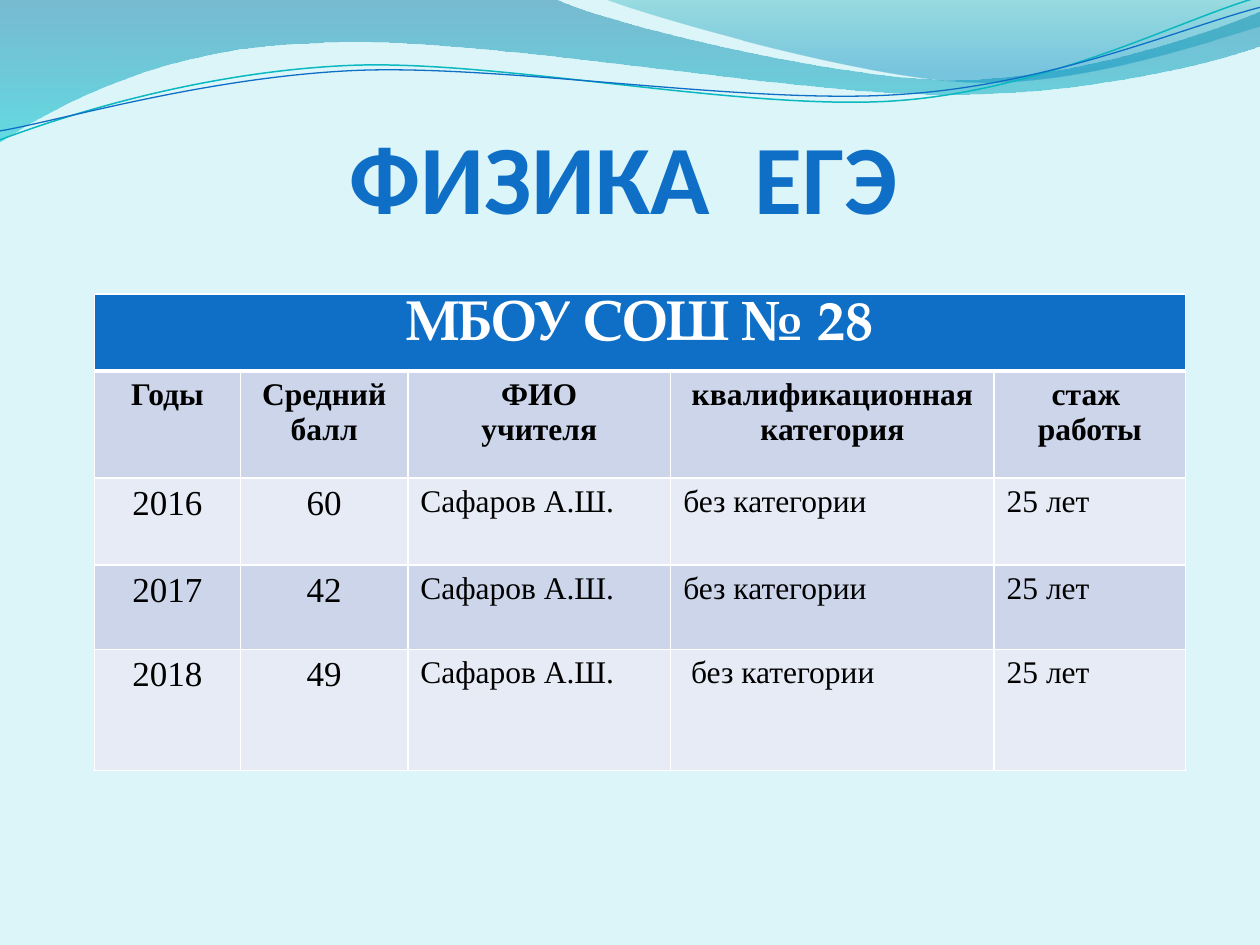
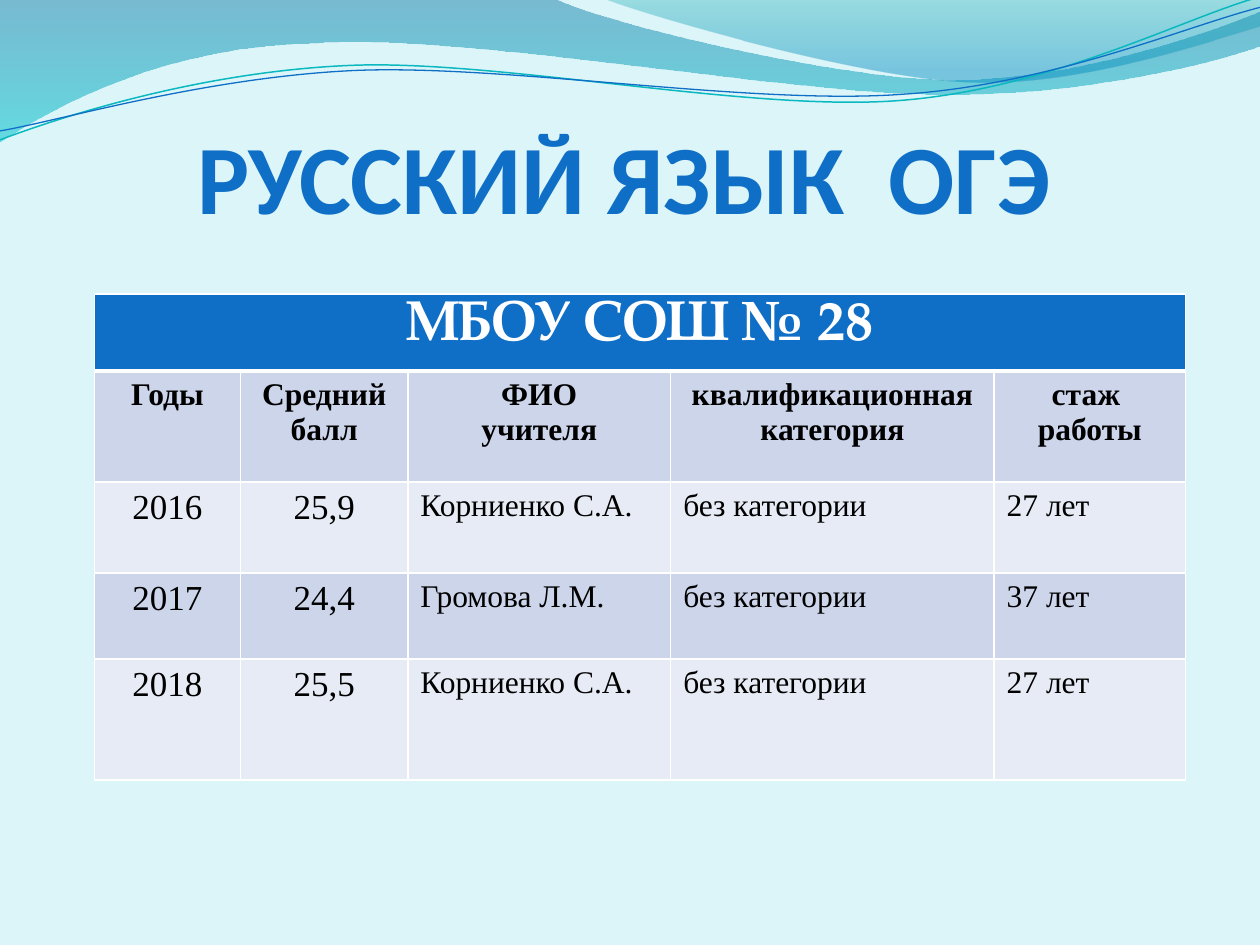
import pptx
import pptx.dml.color
import pptx.enum.text
import pptx.oxml
import pptx.oxml.ns
import pptx.util
from lxml import etree

Cm, Pt = pptx.util.Cm, pptx.util.Pt
ALIGN = pptx.enum.text.PP_ALIGN
qn = pptx.oxml.ns.qn

# Content
SCHOOL = "МБОУ СОШ № 28"
HEADINGS = ["Годы", "Средний балл", "ФИО\nучителя",
            "квалификационная категория", "стаж \nработы"]
EXAMS = [
    {"title": "ФИЗИКА  ЕГЭ",
     "row_heights": [1.55, 2.16, 1.75, 1.7, 2.44],
     "results": [
         ["2016", "60", "Сафаров А.Ш.", "без категории", "25 лет"],
         ["2017", "42", "Сафаров А.Ш.", "без категории", "25 лет"],
         ["2018", "49", "Сафаров А.Ш.", " без категории", "25 лет"]]},
    {"title": "РУССКИЙ ЯЗЫК  ОГЭ",
     "row_heights": [1.55, 2.24, 1.83, 1.73, 2.44],
     "results": [
         ["2016", "25,9", "Корниенко С.А.", "без категории", "27 лет"],
         ["2017", "24,4", "Громова Л.М.", "без категории", "37 лет"],
         ["2018", "25,5", "Корниенко С.А.", "без категории", "27 лет"]]},
]

# Shared look, lengths in cm
BACKGROUND, BLUE, TEAL = "DBF5F9", "0F6FC6", "0AB8BF"
WHITE, BLACK = "FFFFFF", "000000"
BANDS = ["CCD5EA", "E7EBF5"]
COL_WIDTHS = [2.95, 3.37, 5.3, 6.52, 3.86]
TABLE_LEFT, TABLE_TOP = 1.9, 5.93

# Outlines: a start point, then lines (one point) or Bezier curves (three points)
WAVE = [
    [(0, 0)],
    [(11.18, -0.03)],
    [(12.09, 0.43), (16.87, 1.6), (19.25, 1.6)],
    [(21.67, 1.6), (24.33, 0.66), (25.4, 0.23)],
    [(25.43, 0.91)],
    [(24.97, 1.12), (22.1, 1.93), (18.95, 1.9)],
    [(15.8, 1.9), (9.7, 0.71), (6.53, 0.86)],
    [(3.28, 0.91), (1.17, 2.11), (-0.03, 2.87)],
    [(0, 0)],
]
SHEEN = [
    [(12.17, -0.03)],
    [(12.93, 0.28), (17.32, 1.57), (19.53, 1.65)],
    [(21.74, 1.75), (24.41, 0.81), (25.4, 0.53)],
    [(25.4, 0)],
    [(12.17, -0.03)],
]
TEAL_CURVE = [
    [(0, 2.82)],
    [(1.22, 2.36), (4.01, 1.45), (7.04, 1.32)],
    [(10.03, 1.19), (15.06, 2.26), (18.11, 2.03)],
    [(21.16, 1.8), (23.83, 0.38), (25.35, -0.05)],
]
BLUE_CURVE = [
    [(0, 2.64)],
    [(1.19, 2.44), (4.17, 1.55), (7.19, 1.42)],
    [(10.24, 1.3), (15.16, 2.13), (18.21, 1.9)],
    [(21.23, 1.7), (23.9, 0.53), (25.4, 0.15)],
]
# Gradient stops: position, colour, opacity in percent
RIBBONS = [
    (WAVE, [(0, "0074A1", 45), (1, "00C6CF", 55)]),
    (SHEEN, [(0, "00A1A9", 30), (0.8, "008BBF", 45)]),
]
CURVES = [(TEAL_CURVE, TEAL, 0.85), (BLUE_CURVE, BLUE, 0.75)]


def rgb(hex_colour):
    return pptx.dml.color.RGBColor.from_string(hex_colour)


def write(tf, text, size, font, colour, bold, align):
    tf.text = text
    for p in tf.paragraphs:
        p.alignment = align
        for r in p.runs:
            r.font.size, r.font.name, r.font.bold = Pt(size), font, bold
            r.font.color.rgb = rgb(colour)


def add_outline(s, outline, close):
    points = [(Cm(x), Cm(y)) for segment in outline for x, y in segment]
    builder = s.shapes.build_freeform(*points[0], scale=1.0)
    builder.add_line_segments(points[1:], close=close)
    sp = builder.convert_to_shape()
    sp.shadow.inherit = False
    # Join the three points of each curve into one Bezier segment
    lines = iter(list(sp._element.iter(qn("a:lnTo"))))
    for segment in outline[1:]:
        first, *others = [next(lines) for _ in segment]
        if others:
            first.tag = qn("a:cubicBezTo")
            for line in others:
                first.append(line[0])
                line.getparent().remove(line)
    return sp


def add_waves(s):
    for outline, stops in RIBBONS:
        sp = add_outline(s, outline, True)
        sp.line.fill.background()
        sp.fill.gradient()
        sp.fill.gradient_angle = 270
        for stop, (position, colour, _) in zip(sp.fill.gradient_stops, stops):
            stop.position = position
            stop.color.rgb = rgb(colour)
        colours = sp._element.spPr.iter(qn("a:srgbClr"))
        for clr, (_, _, opacity) in zip(colours, stops):
            etree.SubElement(clr, qn("a:alpha"), val=str(opacity * 1000))
    for outline, colour, width in CURVES:
        sp = add_outline(s, outline, False)
        sp.fill.background()
        sp.line.color.rgb = rgb(colour)
        sp.line.width = Pt(width)


def add_title(s, text):
    tf = s.shapes.add_textbox(Cm(1.9), Cm(2.92), Cm(21.36), Cm(1.8)).text_frame
    tf.word_wrap = True
    tf.vertical_anchor = pptx.enum.text.MSO_ANCHOR.BOTTOM
    tf.margin_left = tf.margin_right = tf.margin_top = tf.margin_bottom = 0
    write(tf, text, 56, "Calibri", BLUE, True, ALIGN.CENTER)


def style_cell(cell, fill, top=1, bottom=1):
    tcPr = cell._tc.get_or_add_tcPr()
    for side, width in zip("LRTB", (1, 1, top, bottom)):
        ln = etree.SubElement(tcPr, qn(f"a:ln{side}"), w=str(Pt(width)))
        solid = etree.SubElement(ln, qn("a:solidFill"))
        etree.SubElement(solid, qn("a:srgbClr"), val=WHITE)
    cell.fill.solid()
    cell.fill.fore_color.rgb = rgb(fill)


def add_results(s, results, row_heights):
    rows = [HEADINGS, *results]
    table = s.shapes.add_table(
        len(rows) + 1, len(HEADINGS), Cm(TABLE_LEFT), Cm(TABLE_TOP),
        Cm(sum(COL_WIDTHS)), Cm(sum(row_heights))).table
    for column, width in zip(table.columns, COL_WIDTHS):
        column.width = Cm(width)
    for row, height in zip(table.rows, row_heights):
        row.height = Cm(height)

    # School name across the top
    for cell in table.rows[0].cells:
        style_cell(cell, BLUE, bottom=3)
    school = table.cell(0, 0)
    school.merge(table.cell(0, len(HEADINGS) - 1))
    school.margin_bottom = 0
    write(school.text_frame, SCHOOL, 32, "TeX Gyre Pagella", WHITE, True, ALIGN.CENTER)

    # Headings and yearly results
    for i, texts in enumerate(rows):
        heading = i == 0
        for j, text in enumerate(texts):
            cell = table.cell(i + 1, j)
            style_cell(cell, BANDS[i % 2], top=3 if heading else 1)
            figure = j < 2
            write(cell.text_frame, text, 20 if figure and not heading else 18,
                  "Times New Roman", BLACK, heading,
                  ALIGN.CENTER if heading or figure else ALIGN.LEFT)


def main():
    prs = pptx.Presentation()
    prs.slide_width, prs.slide_height = Cm(25.4), Cm(19.05)
    for exam in EXAMS:
        s = prs.slides.add_slide(prs.slide_layouts[6])
        s.background.fill.solid()
        s.background.fill.fore_color.rgb = rgb(BACKGROUND)
        add_waves(s)
        add_title(s, exam["title"])
        add_results(s, exam["results"], exam["row_heights"])
    prs.save("out.pptx")


if __name__ == "__main__":
    main()
